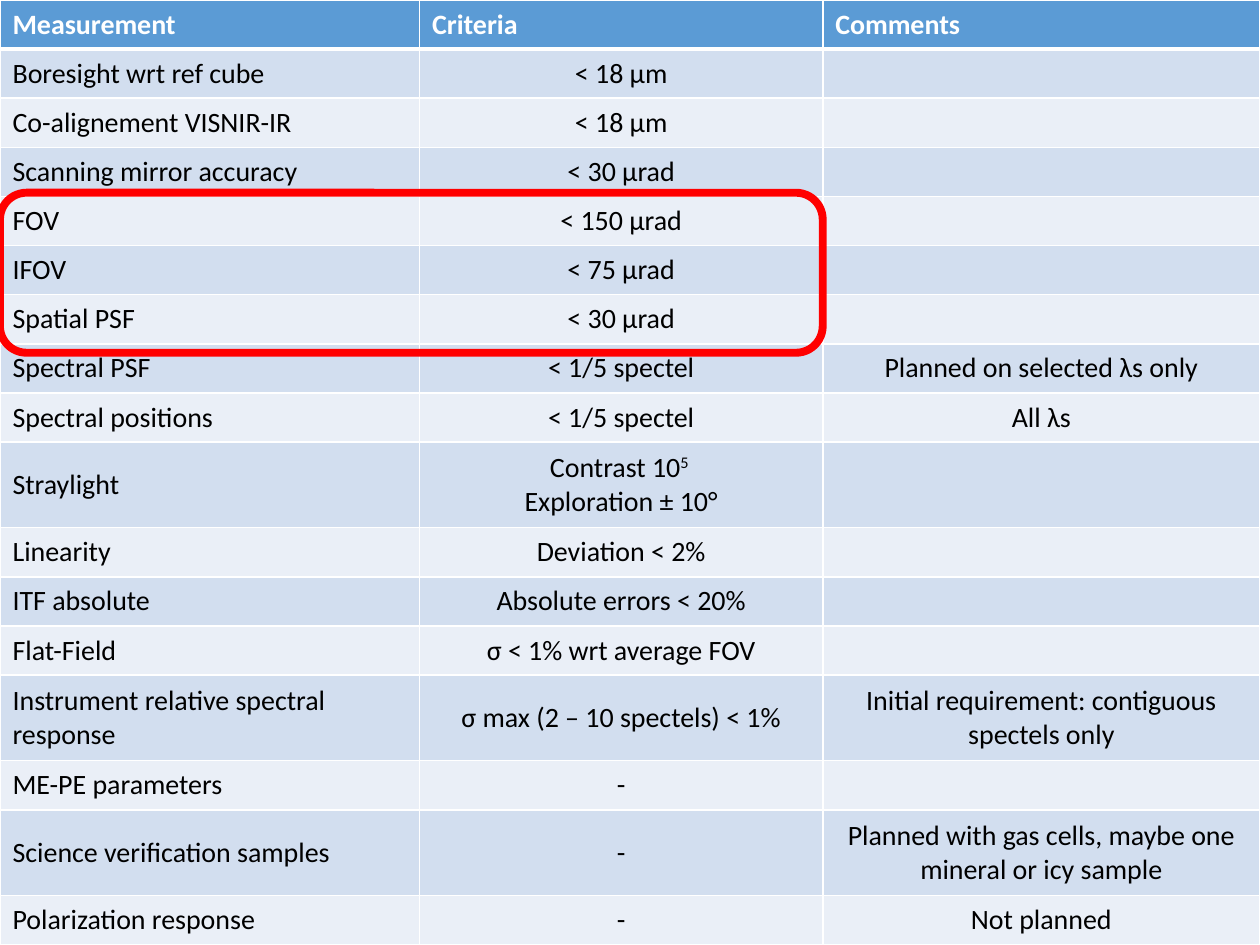
"""Build a one-slide table of instrument calibration criteria with a highlighted group."""
from dataclasses import dataclass

from lxml.etree import SubElement
from pptx import Presentation
from pptx.dml.color import RGBColor
from pptx.enum.shapes import MSO_SHAPE
from pptx.enum.text import MSO_ANCHOR, PP_ALIGN
from pptx.oxml.ns import qn
from pptx.util import Inches, Pt

FONT = "Calibri"
SIZE = 16
WHITE, BLACK, RED = "FFFFFF", "000000", "FF0000"
HEADER_FILL = "5B9BD5"
BAND_FILLS = ("EAEFF7", "D2DEEF")
COLUMN_WIDTHS = (3.33, 3.2, 3.47)
ROW_HEIGHT, TALL_ROW_HEIGHT = 0.39, 0.68


@dataclass(frozen=True)
class Row:
    """One table row; ^ in the criteria starts and ends a superscript."""
    measurement: str
    criteria: str
    comments: str = ""
    tall: bool = False


ROWS = (
    Row("Measurement", "Criteria", "Comments"),
    Row("Boresight wrt ref cube", "< 18 µm"),
    Row("Co-alignement VISNIR-IR", "< 18 µm"),
    Row("Scanning mirror accuracy", "< 30 µrad"),
    Row("FOV", "< 150 µrad"),
    Row("IFOV", "< 75 µrad"),
    Row("Spatial PSF", "< 30 µrad"),
    Row("Spectral PSF", "< 1/5 spectel", "Planned on selected λs only"),
    Row("Spectral positions", "< 1/5 spectel", "All λs"),
    Row("Straylight", "Contrast 10^5 ^\nExploration ± 10°", tall=True),
    Row("Linearity", "Deviation < 2%"),
    Row("ITF absolute", "Absolute errors < 20%"),
    Row("Flat-Field", "σ < 1% wrt average FOV"),
    Row("Instrument relative spectral response", "σ max (2 – 10 spectels) < 1%",
        "Initial requirement: contiguous spectels only", tall=True),
    Row("ME-PE parameters", "-"),
    Row("Science verification samples", "-",
        "Planned with gas cells, maybe one mineral or icy sample", tall=True),
    Row("Polarization response", "-", "Not planned"),
)


def rgb(color: str) -> RGBColor:
    """Turn a hex string into a colour."""
    return RGBColor.from_string(color)


def set_borders(cell, top: float, bottom: float) -> None:
    """Draw white borders, given the top and bottom widths in points."""
    tc_pr = cell._tc.get_or_add_tcPr()
    for side, width in (("L", 1), ("R", 1), ("T", top), ("B", bottom)):
        ln = SubElement(tc_pr, qn(f"a:ln{side}"), w=str(Pt(width)))
        SubElement(SubElement(ln, qn("a:solidFill")), qn("a:srgbClr"), val=WHITE)


def write_cell(cell, text: str, color: str, bold: bool, align: PP_ALIGN) -> None:
    """Write the lines of a cell run by run."""
    tf = cell.text_frame
    cell.vertical_anchor = MSO_ANCHOR.MIDDLE
    for i, line in enumerate(text.split("\n")):
        p = tf.add_paragraph() if i else tf.paragraphs[0]
        p.alignment = align
        for j, part in enumerate(line.split("^")):
            if not part:
                continue
            r = p.add_run()
            r.text = part
            r.font.name, r.font.size, r.font.bold = FONT, Pt(SIZE), bold
            r.font.color.rgb = rgb(color)
            if j % 2:
                r._r.get_or_add_rPr().set("baseline", "30000")
        SubElement(p._p, qn("a:endParaRPr"), sz=str(SIZE * 100))


def add_criteria_table(s, rows: tuple[Row, ...]) -> None:
    """Add the banded table that fills the slide."""
    table = s.shapes.add_table(len(rows), len(COLUMN_WIDTHS), 0, 0,
                               Inches(10), Inches(7.5)).table
    for column, width in zip(table.columns, COLUMN_WIDTHS):
        column.width = Inches(width)
    for i, row in enumerate(rows):
        header = i == 0
        table.rows[i].height = Inches(TALL_ROW_HEIGHT if row.tall else ROW_HEIGHT)
        for j, text in enumerate((row.measurement, row.criteria, row.comments)):
            cell = table.cell(i, j)
            set_borders(cell, top=3 if i == 1 else 1, bottom=3 if header else 1)
            cell.fill.solid()
            cell.fill.fore_color.rgb = rgb(HEADER_FILL if header else BAND_FILLS[i % 2])
            align = PP_ALIGN.LEFT if header or j == 0 else PP_ALIGN.CENTER
            write_cell(cell, text, WHITE if header else BLACK, header, align)


def add_highlight(s, left: float, top: float, width: float, height: float) -> None:
    """Outline a group of rows with a red rounded frame."""
    sp = s.shapes.add_shape(MSO_SHAPE.ROUNDED_RECTANGLE, Inches(left), Inches(top),
                            Inches(width), Inches(height))
    sp.shadow.inherit = False
    sp.fill.background()
    sp.line.color.rgb = rgb(RED)
    sp.line.width = Pt(4.5)


def main() -> None:
    """Build and save the slide."""
    prs = Presentation()
    prs.slide_width, prs.slide_height = Inches(10), Inches(7.5)
    s = prs.slides.add_slide(prs.slide_layouts[6])
    add_criteria_table(s, ROWS)
    add_highlight(s, 0, 1.53, 6.53, 1.27)
    prs.save("out.pptx")


if __name__ == "__main__":
    main()
